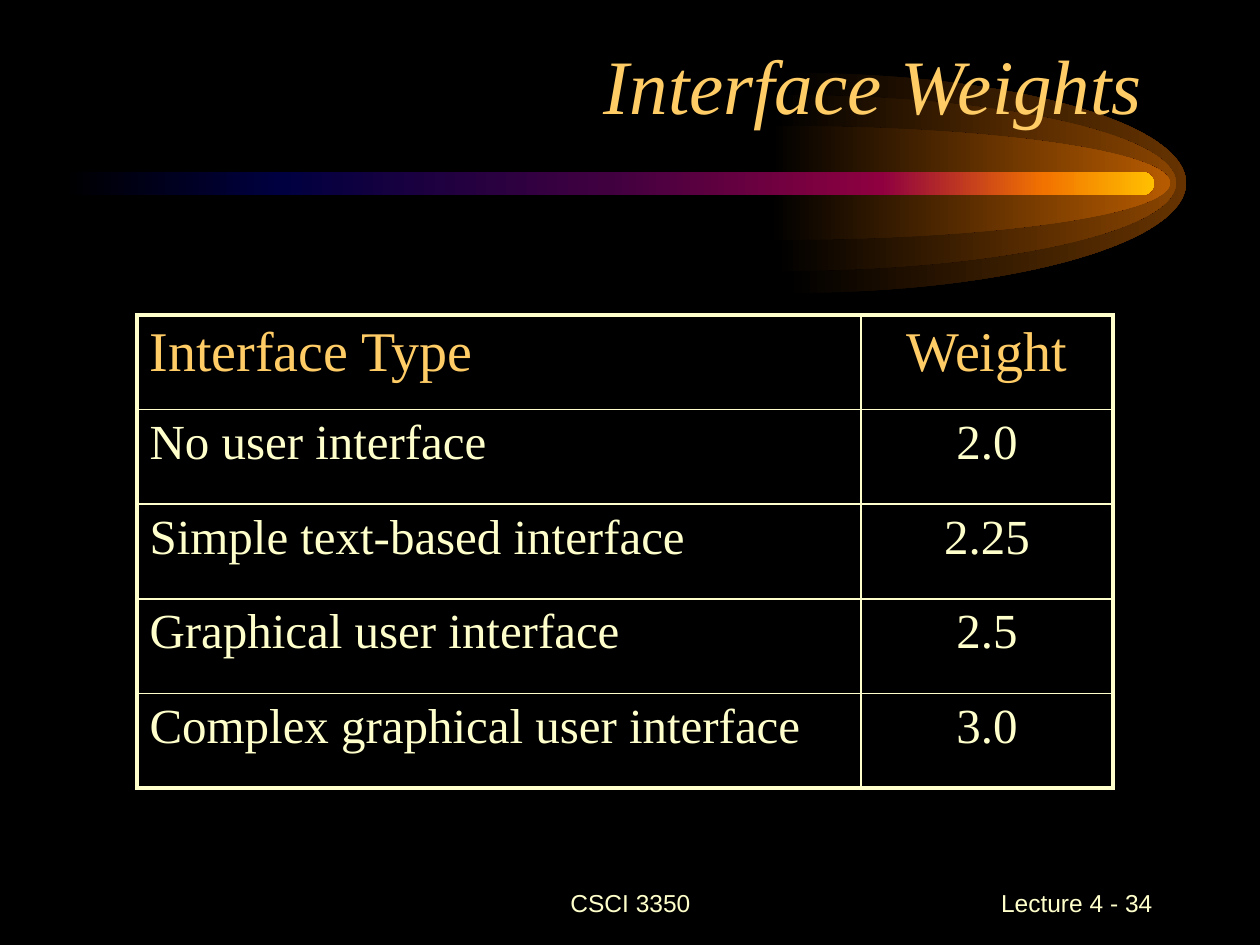
from lxml.etree import SubElement
from pptx import Presentation
from pptx.dml.color import RGBColor
from pptx.enum.shapes import MSO_SHAPE as Shape
from pptx.enum.text import MSO_ANCHOR as Anchor, PP_ALIGN as Align
from pptx.oxml.ns import qn
from pptx.util import Pt

CREAM, GOLD, BLACK = "FFFFCC", "FFCC66", "000000"
SERIF, SANS = "Times New Roman", "Arial"
ROWS = [
    ("Interface Type", "Weight"),
    ("No user interface", "2.0"),
    ("Simple text-based interface", "2.25"),
    ("Graphical user interface", "2.5"),
    ("Complex graphical user interface", "3.0"),
]
# left, half height, colour at the right end
GLOWS = [(786, 110, "663300"), (776, 88, "894400"), (770, 57, "B75B00")]
BEAM = [(0, BLACK), (20, "000040"), (50, "400040"),
        (75, "8F0040"), (90, "F27300"), (100, "FFBF00")]


def px(n):
    return round(n * 914400 / 126)


def rgb(code):
    return RGBColor.from_string(code)


def blend(shape, stops):
    """Fill a shape with a left-to-right gradient and no outline."""
    shape.shadow.inherit = False
    shape.line.fill.background()
    shape.fill.gradient()
    shape.fill.gradient_angle = 0
    items = next(shape.element.iter(qn("a:gsLst")))
    for old in list(items):
        items.remove(old)
    for place, code in stops:
        stop = SubElement(items, qn("a:gs"), pos=str(place * 1000))
        SubElement(stop, qn("a:srgbClr"), val=code)


def bend(line, dots):
    """Turn a line of an outline into a curve."""
    line.tag = qn("a:cubicBezTo")
    for old in list(line):
        line.remove(old)
    for x, y in dots:
        SubElement(line, qn("a:pt"), x=str(px(x)), y=str(px(y)))


def add_glow(slide, left, high, code):
    """Draw the right half of an ellipse."""
    mid, wide, start = 183, 400, 6
    dots = [(left + start, mid - high), (left + wide, mid),
            (left, mid + high), (left + start, mid)]
    ends = [(px(x), px(y)) for x, y in dots]
    form = slide.shapes.build_freeform(*ends[0])
    form.add_line_segments(ends[1:], close=True)
    shape = form.convert_to_shape()
    upper, lower = list(shape.element.iter(qn("a:lnTo")))[:2]
    flat, steep = start + 0.55 * (wide - start), 0.55 * high
    bend(upper, [(flat, 0), (wide, high - steep), (wide, high)])
    bend(lower, [(wide, high + steep), (flat, 2 * high), (0, 2 * high)])
    blend(shape, [(0, BLACK), (100, code)])


def add_beam(slide):
    beam = slide.shapes.add_shape(
        Shape.ROUNDED_RECTANGLE, px(63), px(172), px(1091), px(23))
    beam.adjustments[0] = 0.5
    blend(beam, BEAM)


def style(para, size, name, code, align):
    para.alignment = align
    font = para.font
    font.size, font.name = Pt(size), name
    font.color.rgb = rgb(code)
    return para


def add_text(slide, text, box, size, name, code, align, anchor=Anchor.MIDDLE):
    frame = slide.shapes.add_textbox(*map(px, box)).text_frame
    frame.word_wrap = True
    frame.vertical_anchor = anchor
    frame.text = text
    return style(frame.paragraphs[0], size, name, code, align)


def add_borders(cell, edges):
    """Draw the sides L, R, T and B; outer ones are thicker."""
    props = cell._tc.get_or_add_tcPr()
    for i, (side, outer) in enumerate(zip("LRTB", edges)):
        line = SubElement(props, qn(f"a:ln{side}"),
                          w=str(Pt(2.25 if outer else 1)))
        fill = SubElement(line, qn("a:solidFill"))
        SubElement(fill, qn("a:srgbClr"), val=CREAM)
        props.insert(i, line)


def add_grid(slide):
    count, widths = len(ROWS), (724, 252)
    table = slide.shapes.add_table(
        count, 2, px(137), px(315), px(sum(widths)), px(473)).table
    table.first_row = table.horz_banding = False
    for col, width in zip(table.columns, widths):
        col.width = px(width)
    for r, row in enumerate(ROWS):
        size, code = (28, CREAM) if r else (32, GOLD)
        for c, text in enumerate(row):
            cell = table.cell(r, c)
            cell.text = text
            cell.fill.background()
            para = style(cell.text_frame.paragraphs[0], size, SERIF, code,
                         Align.CENTER if c else Align.LEFT)
            para.space_before = Pt(size * 0.2)
            add_borders(cell, (c == 0, c == 1, r == 0, r == count - 1))


def main():
    deck = Presentation()
    deck.slide_width, deck.slide_height = px(1260), px(945)
    slide = deck.slides.add_slide(deck.slide_layouts[6])
    back = slide.background.fill
    back.solid()
    back.fore_color.rgb = rgb(BLACK)
    for glow in GLOWS:
        add_glow(slide, *glow)
    add_beam(slide)
    add_text(slide, "CSCI 3350", (431, 871, 399, 63),
             14, SANS, CREAM, Align.CENTER)
    add_text(slide, "Lecture 4 - 34", (903, 871, 262, 63),
             14, SANS, CREAM, Align.RIGHT)
    title = add_text(slide, "Interface Weights", (84, 31, 1071, 105),
                     44, SERIF, GOLD, Align.RIGHT, Anchor.BOTTOM)
    title.font.italic = True
    add_grid(slide)
    deck.save("out.pptx")


if __name__ == "__main__":
    main()
